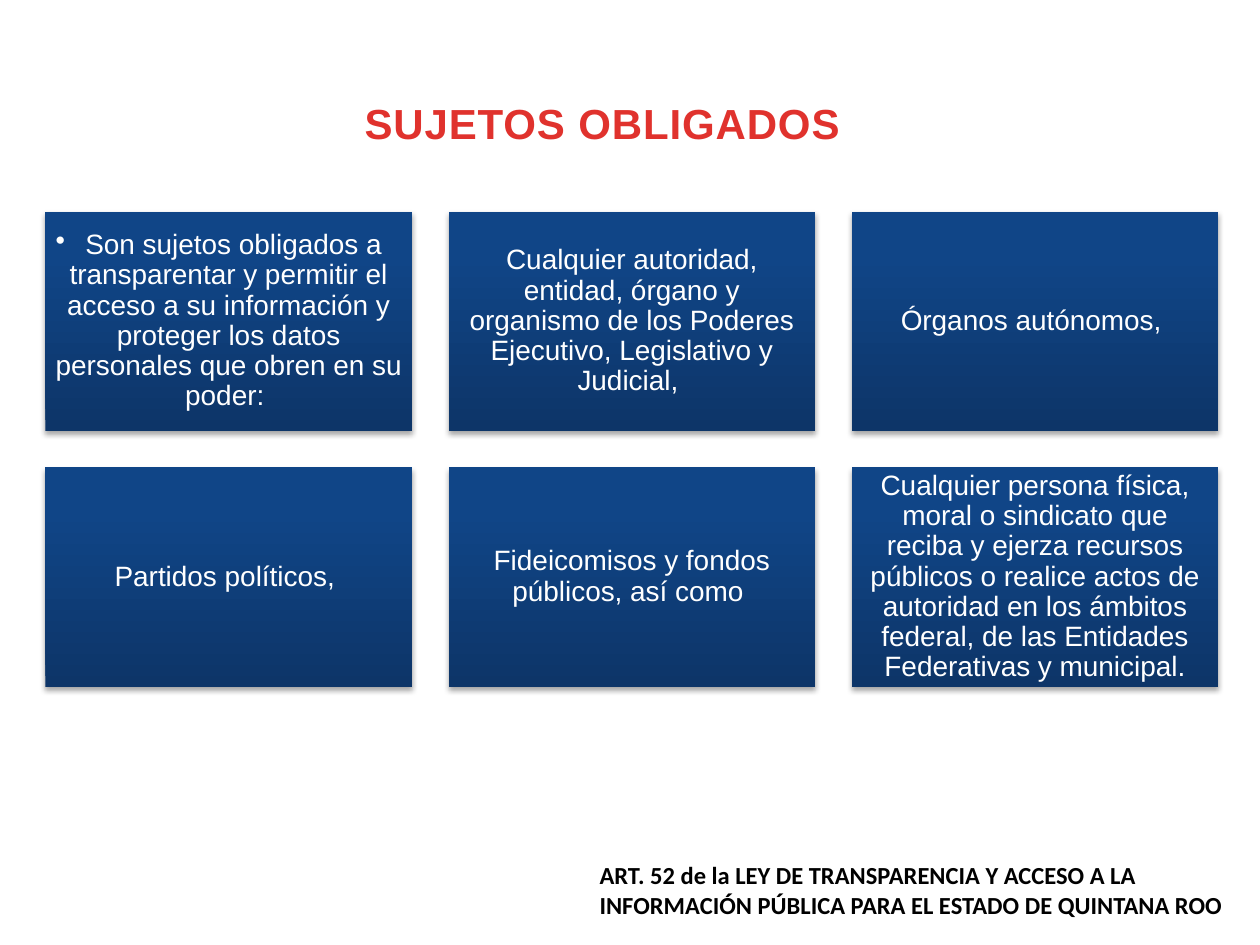
from lxml import etree
from pptx import Presentation
from pptx.dml.color import RGBColor
from pptx.enum.shapes import MSO_SHAPE
from pptx.enum.text import MSO_ANCHOR, MSO_AUTO_SIZE, PP_ALIGN
from pptx.oxml import parse_xml
from pptx.oxml.ns import qn
from pptx.util import Inches, Pt

THEME = {
    "title": ("Arial", 24, "E0322D", True),
    "card": ("Arial", 16, "FFFFFF", False),
    "source": ("Calibri", 14, "000000", True),
    "card_stops": [(0, "0D3568"), (80, "104587"), (100, "0E458A")],
}
NS = 'xmlns:a="http://schemas.openxmlformats.org/drawingml/2006/main"'


def add_run(p, text, style):
    font, size, color, bold = THEME[style]
    r = p.add_run()
    r.text = text
    r.font.name = font
    r.font.size = Pt(size)
    r.font.bold = bold
    r.font.color.rgb = RGBColor.from_string(color)
    return r


def style_card(shape):
    """Give the card its three-stop gradient and soft shadow."""
    shape.line.fill.background()
    shape.shadow.inherit = False
    shape.fill.gradient()
    shape.fill.gradient_angle = 90
    stops = shape._element.spPr.find(qn("a:gradFill")).find(qn("a:gsLst"))
    for stop in list(stops):
        stops.remove(stop)
    for pos, color in THEME["card_stops"]:
        stops.append(parse_xml(
            f'<a:gs {NS} pos="{pos * 1000}"><a:srgbClr val="{color}"/></a:gs>'))
    effects = shape._element.spPr.find(qn("a:effectLst"))
    effects.append(parse_xml(
        f'<a:outerShdw {NS} blurRad="{Pt(3.1)}" dist="{Pt(1.8)}" dir="5400000" '
        'rotWithShape="0"><a:srgbClr val="000000"><a:alpha val="35000"/>'
        '</a:srgbClr></a:outerShdw>'))


prs = Presentation()
prs.slide_width, prs.slide_height = Inches(10), Inches(7.5)
s = prs.slides.add_slide(prs.slide_layouts[5])

# Title
title = s.shapes.title
title.left, title.top = Inches(2.77), Inches(0.72)
title.width, title.height = Inches(4.02), Inches(0.5)
tf = title.text_frame
tf.word_wrap = False
tf.auto_size = MSO_AUTO_SIZE.SHAPE_TO_FIT_TEXT
tf.vertical_anchor = MSO_ANCHOR.TOP
p = tf.paragraphs[0]
p.alignment = PP_ALIGN.CENTER
r = add_run(p, "SUJETOS OBLIGADOS", "title")
r.font._element.set("spc", "50")

# Grid of cards, three to a row; the trailing spaces count in the centring
CARDS = [
    "Son sujetos obligados a transparentar y permitir el acceso a su "
    "información y proteger los datos personales que obren en su poder: ",
    "Cualquier autoridad, entidad, órgano y organismo de los Poderes "
    "Ejecutivo, Legislativo y Judicial, ",
    "Órganos autónomos, ",
    "Partidos políticos, ",
    "Fideicomisos y fondos públicos, así como ",
    "Cualquier persona física, moral o sindicato que reciba y ejerza recursos "
    "públicos o realice actos de autoridad en los ámbitos federal, de las "
    "Entidades Federativas y municipal.",
]
COLUMNS, CARD_W, CARD_H, GAP = 3, 2.91, 1.74, 0.29
LEFT, TOP = 0.36, 1.68

for i, text in enumerate(CARDS):
    row, col = divmod(i, COLUMNS)
    card = s.shapes.add_shape(
        MSO_SHAPE.RECTANGLE,
        Inches(LEFT + col * (CARD_W + GAP)), Inches(TOP + row * (CARD_H + GAP)),
        Inches(CARD_W), Inches(CARD_H))
    style_card(card)
    tf = card.text_frame
    tf.word_wrap = True
    tf.vertical_anchor = MSO_ANCHOR.MIDDLE
    tf.margin_left = tf.margin_right = Inches(0.07)
    tf.margin_top = tf.margin_bottom = Inches(0.07)
    p = tf.paragraphs[0]
    p.alignment = PP_ALIGN.CENTER
    p.line_spacing = 0.9
    if i == 0:  # only the opening card has a bullet
        etree.SubElement(p._p.get_or_add_pPr(), qn("a:buChar")).set("char", "•")
    add_run(p, text, "card")

# Legal source
source = s.shapes.add_textbox(Inches(4.66), Inches(6.78), Inches(5.21), Inches(0.57))
tf = source.text_frame
tf.word_wrap = True
tf.auto_size = MSO_AUTO_SIZE.SHAPE_TO_FIT_TEXT
add_run(tf.paragraphs[0],
        "ART. 52 de la LEY DE TRANSPARENCIA Y ACCESO A LA INFORMACIÓN PÚBLICA "
        "PARA EL ESTADO DE QUINTANA ROO", "source")

prs.save("out.pptx")
